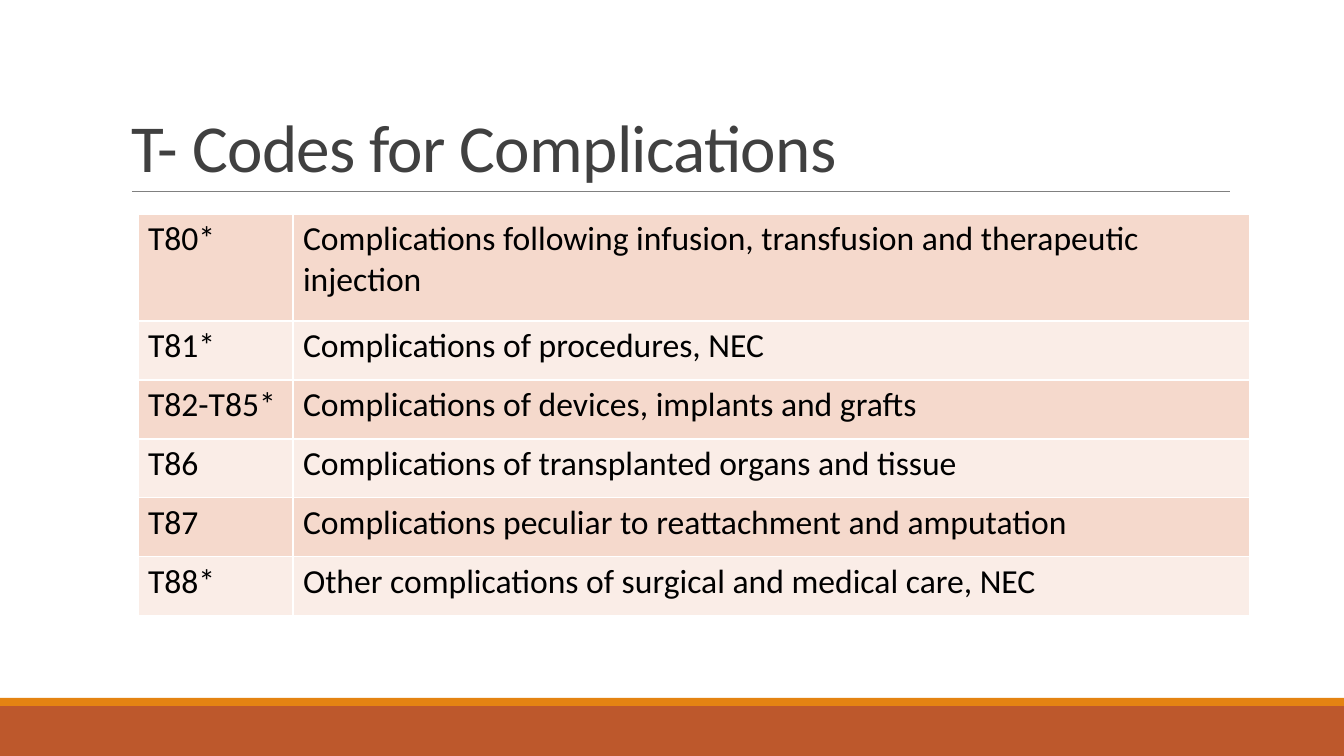
from lxml.etree import SubElement
from pptx import Presentation
from pptx.dml.color import RGBColor
from pptx.enum.shapes import MSO_CONNECTOR, MSO_SHAPE
from pptx.enum.text import MSO_ANCHOR, MSO_AUTO_SIZE, PP_ALIGN
from pptx.oxml import parse_xml
from pptx.oxml.ns import nsdecls, qn
from pptx.util import Pt

TITLE = "T- Codes for Complications"
CODES = [
    ("T80*", "Complications following infusion, transfusion and therapeutic injection"),
    ("T81*", "Complications of procedures, NEC"),
    ("T82-T85*", "Complications of devices, implants and grafts"),
    ("T86", "Complications of transplanted organs and tissue"),
    ("T87", "Complications peculiar to reattachment and amputation"),
    ("T88*", "Other complications of surgical and medical care, NEC"),
]
COLORS = {
    "title": "404040", "text": "000000", "rule": "808080", "border": "FFFFFF",
    "footer": "BD582C", "stripe": "E48312",
    "dark_row": "F5D9CC", "light_row": "FAEDE7",
}
FONT = "Calibri"

# Lengths in px
SLIDE_WIDTH, SLIDE_HEIGHT = 1344, 756
TITLE_BOX = (121, 31, 1109, 160)
RULE = (132, 191, 1230, 191)
BANDS = [("footer", 706, 50), ("stripe", 698, 8)]
TABLE_LEFT, TABLE_TOP = 138, 214
COLUMN_WIDTHS = [155, 957]
ROW_HEIGHTS = [107] + [59] * (len(CODES) - 1)


def px(*lengths):
    return [round(length * 914400 / 100.8) for length in lengths]


def color(name):
    return RGBColor.from_string(COLORS[name])


def write(text_frame, text, size=24, color_name="text", line_spacing=1.0, tracking=None):
    paragraph = text_frame.paragraphs[0]
    paragraph.alignment = PP_ALIGN.LEFT
    paragraph.line_spacing = line_spacing
    run = paragraph.add_run()
    run.text = text
    run.font.name = FONT
    run.font.size = Pt(size)
    run.font.color.rgb = color(color_name)
    if tracking is not None:
        run.font._element.set("spc", str(round(tracking * 100)))


def add_band(slide, color_name, top, height):
    band = slide.shapes.add_shape(MSO_SHAPE.RECTANGLE, *px(0, top, SLIDE_WIDTH, height))
    band.shadow.inherit = False
    band.fill.solid()
    band.fill.fore_color.rgb = color(color_name)
    band.line.fill.background()


def add_rule(slide):
    rule = slide.shapes.add_connector(MSO_CONNECTOR.STRAIGHT, *px(*RULE))
    rule.line.color.rgb = color("rule")
    rule.line.width = Pt(0.5)
    SubElement(rule._element.spPr, qn("a:effectLst"))


def add_title(slide):
    title = slide.shapes.title
    title.left, title.top, title.width, title.height = px(*TITLE_BOX)
    frame = title.text_frame
    frame.word_wrap = True
    frame.auto_size = MSO_AUTO_SIZE.NONE
    frame.vertical_anchor = MSO_ANCHOR.BOTTOM
    write(frame, TITLE, size=48, color_name="title", line_spacing=0.85, tracking=-0.5)


def set_borders(cell):
    properties = cell._tc.get_or_add_tcPr()
    for index, side in enumerate(("lnL", "lnR", "lnT", "lnB")):
        properties.insert(index, parse_xml(
            f'<a:{side} {nsdecls("a")} w="{Pt(1)}"><a:solidFill>'
            f'<a:srgbClr val="{COLORS["border"]}"/></a:solidFill></a:{side}>'))


def add_code_table(slide):
    frame = slide.shapes.add_table(
        len(CODES), len(COLUMN_WIDTHS),
        *px(TABLE_LEFT, TABLE_TOP, sum(COLUMN_WIDTHS), sum(ROW_HEIGHTS)))
    table = frame.table
    table.first_row = False
    for column, width in zip(table.columns, px(*COLUMN_WIDTHS)):
        column.width = width
    for row, height in zip(table.rows, px(*ROW_HEIGHTS)):
        row.height = height
    for row_index, (row, texts) in enumerate(zip(table.rows, CODES)):
        for cell, text in zip(row.cells, texts):
            cell.fill.solid()
            cell.fill.fore_color.rgb = color("light_row" if row_index % 2 else "dark_row")
            set_borders(cell)
            write(cell.text_frame, text)


def main():
    presentation = Presentation()
    presentation.slide_width, presentation.slide_height = px(SLIDE_WIDTH, SLIDE_HEIGHT)
    slide = presentation.slides.add_slide(presentation.slide_layouts.get_by_name("Title Only"))
    for band in BANDS:
        add_band(slide, *band)
    add_rule(slide)
    add_title(slide)
    add_code_table(slide)
    presentation.save("out.pptx")


if __name__ == "__main__":
    main()
